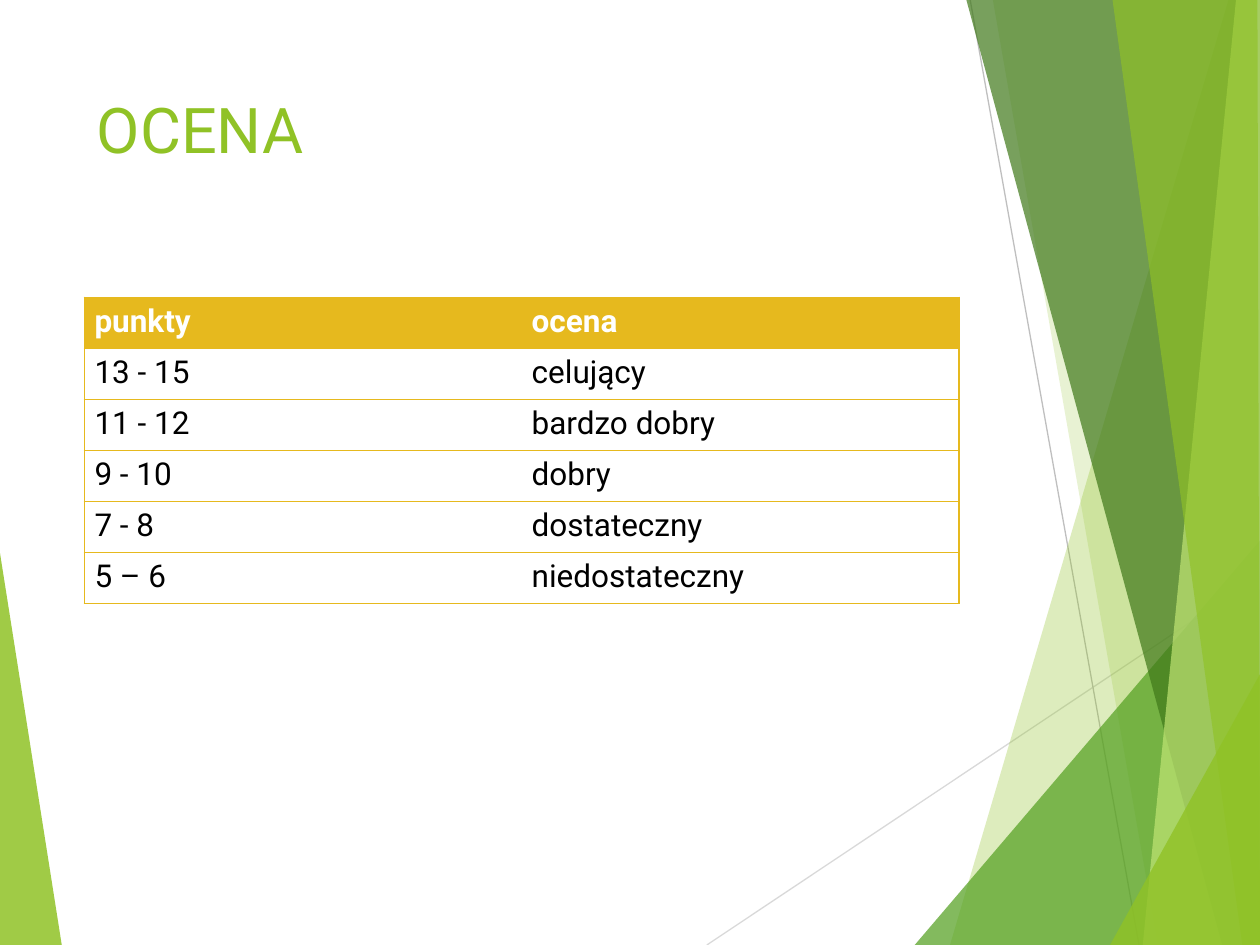
import pptx
import pptx.dml.color
import pptx.enum.shapes
import pptx.enum.text
import pptx.oxml
import pptx.oxml.ns
import pptx.util

COLORS = {
    "lime": "90C226", "green": "54A021", "forest": "3F7819", "pale": "C0E474",
    "gold": "E6B91E", "white": "FFFFFF", "black": "000000",
    "silver": "D9D9D9", "gray": "BFBFBF",
}
COLUMNS, ROWS = 100, 75
FACETS = [
    ("lime", 85, [(0, 43.9), (4.9, 75), (0, 75)]),
    ("lime", 30, [(97.5, 0), (75.4, 75), (100, 75), (100, 0)]),
    ("lime", 20, [(78.8, 0), (91.9, 75), (100, 75), (100, 0)]),
    ("green", 72, [(72.6, 75), (100, 42.9), (100, 75)]),
    ("forest", 70, [(76.7, 0), (97, 75), (100, 75), (100, 0)]),
    ("pale", 70, [(98.1, 0), (90.7, 75), (100, 75), (100, 0)]),
    ("lime", 65, [(88.3, 0), (98.6, 75), (100, 75), (99.8, 0)]),
    ("lime", 80, [(88.1, 75), (100, 53.5), (100, 75)]),
]
RAYS = [("silver", (56.1, 75), (100, 45.7)), ("gray", (77, 0), (90.4, 75))]
GRADES = [
    ("punkty", "ocena"),
    ("13 - 15", "celujący"),
    ("11 - 12", "bardzo dobry"),
    ("9 - 10", "dobry"),
    ("7 - 8", "dostateczny"),
    ("5 – 6", "niedostateczny"),
]


class SlideBuilder:
    font = "Roboto"

    def __init__(self, deck):
        self.page = deck.slides.add_slide(deck.slide_layouts[6])
        self.column = deck.slide_width / COLUMNS
        self.row = deck.slide_height / ROWS

    def x(self, columns):
        return pptx.util.Emu(round(columns * self.column))

    def y(self, rows):
        return pptx.util.Emu(round(rows * self.row))

    def color(self, name):
        return pptx.dml.color.RGBColor.from_string(COLORS[name])

    def apply(self, target, values):
        for name, value in values.items():
            setattr(target, name, value)

    def add_words(self, frame, words, size, color, bold=False):
        span = frame.paragraphs[0].add_run()
        span.text = words
        self.apply(span.font, {"name": self.font, "size": pptx.util.Pt(size), "bold": bold})
        span.font.color.rgb = self.color(color)

    def facet(self, color, opacity, points):
        corners = [(self.x(column), self.y(row)) for column, row in points]
        outline = self.page.shapes.build_freeform(*corners[0])
        outline.add_line_segments(corners[1:], close=True)
        shape = outline.convert_to_shape()
        shape.shadow.inherit = False
        shape.line.fill.background()
        shape.fill.solid()
        shape.fill.fore_color.rgb = self.color(color)
        tint = shape._element.spPr.find(".//" + pptx.oxml.ns.qn("a:srgbClr"))
        tint.append(self.element("alpha", f'val="{opacity * 1000}"'))

    def ray(self, color, start, end):
        line = self.page.shapes.add_connector(
            pptx.enum.shapes.MSO_CONNECTOR.STRAIGHT,
            self.x(start[0]), self.y(start[1]), self.x(end[0]), self.y(end[1]))
        line.line.width = pptx.util.Pt(0.75)
        line.line.color.rgb = self.color(color)
        line._element.spPr.append(self.element("effectLst"))

    def title(self, words, left, top, width, height):
        box = self.page.shapes.add_textbox(
            self.x(left), self.y(top), self.x(width), self.y(height))
        self.apply(box.text_frame, {
            "word_wrap": True,
            "vertical_anchor": pptx.enum.text.MSO_ANCHOR.TOP,
        })
        self.add_words(box.text_frame, words, 36, "lime")

    def table(self, records, left, top, width, height):
        count = len(records[0])
        table = self.page.shapes.add_table(
            len(records), count,
            self.x(left), self.y(top), self.x(width), self.y(height)).table
        table.horz_banding = False
        for row, record in enumerate(records):
            for column, words in enumerate(record):
                cell = table.cell(row, column)
                self.apply(cell, {
                    "margin_left": self.x(0.8), "margin_right": self.x(0.8),
                    "margin_top": self.y(0.5), "margin_bottom": self.y(0.5),
                })
                header = row == 0
                if header:
                    cell.fill.solid()
                    cell.fill.fore_color.rgb = self.color("gold")
                else:
                    cell.fill.background()
                self.add_words(cell.text_frame, words, 18, "white" if header else "black", header)
                self.borders(cell, {
                    "L": column == 0, "R": column == count - 1, "T": True, "B": True})

    def borders(self, cell, sides):
        gold = f'<a:solidFill><a:srgbClr val="{COLORS["gold"]}"/></a:solidFill>'
        properties = cell._tc.get_or_add_tcPr()
        for place, (side, drawn) in enumerate(sides.items()):
            paint = gold if drawn else "<a:noFill/>"
            properties.insert(place, self.element(f"ln{side}", 'w="12700"', paint))

    def element(self, tag, attributes="", content=""):
        namespace = pptx.oxml.ns.nsdecls("a")
        return pptx.oxml.parse_xml(f"<a:{tag} {namespace} {attributes}>{content}</a:{tag}>")


def main():
    deck = pptx.Presentation()
    deck.slide_width = pptx.util.Inches(10)
    deck.slide_height = pptx.util.Inches(7.5)
    slide = SlideBuilder(deck)
    slide.facet(*FACETS[0])
    for ray in RAYS:
        slide.ray(*ray)
    for facet in FACETS[1:]:
        slide.facet(*facet)
    slide.title("OCENA", 6.7, 6.7, 69.4, 14.4)
    slide.table(GRADES, 6.7, 23.6, 69.4, 24.3)
    deck.save("out.pptx")


if __name__ == "__main__":
    main()
